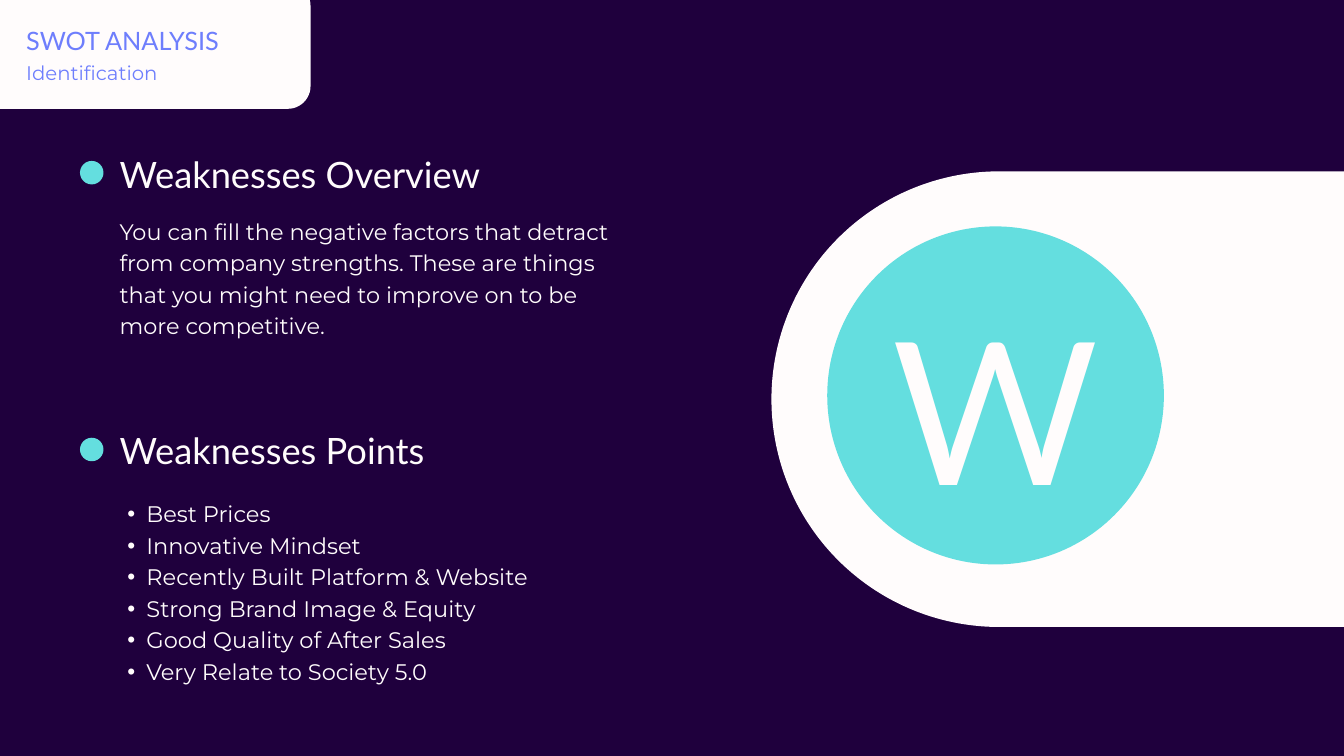
import pptx
import pptx.dml.color
import pptx.enum.shapes
import pptx.enum.text
import pptx.oxml.ns
import pptx.util
from lxml import etree

Pt = pptx.util.Pt
Shape = pptx.enum.shapes.MSO_SHAPE
Align = pptx.enum.text.PP_ALIGN


def color(hex_string):
    return pptx.dml.color.RGBColor.from_string(hex_string)


class SlideBuilder:
    NIGHT, WHITE, AQUA, VIOLET = "1F003D", "FFFCFC", "64DEDF", "6E7EFC"
    HEADING, BODY = "Lato", "Montserrat"
    LEADING = 1.4

    def __init__(self, page):
        self.page = page
        page.background.fill.solid()
        page.background.fill.fore_color.rgb = color(self.NIGHT)

    def shape(self, kind, left, top, width, height, fill):
        item = self.page.shapes.add_shape(
            kind, Pt(left), Pt(top), Pt(width), Pt(height))
        item.shadow.inherit = False
        item.fill.solid()
        item.fill.fore_color.rgb = color(fill)
        item.line.fill.background()
        return item

    def text(self, left, top, width, height, lines, size, font,
             fill=WHITE, align=Align.LEFT, bullets=False):
        box = self.page.shapes.add_textbox(0, 0, 0, 0)
        self.fill_box(box, left, top, width, height, lines, size, font, fill, align, bullets)

    def title(self, left, top, width, height, line, size):
        box = self.page.shapes.title
        box.element.getparent().append(box.element)  # bring to front
        self.fill_box(box, left, top, width, height, [line], size, self.HEADING, self.VIOLET)

    def fill_box(self, box, left, top, width, height, lines, size, font, fill,
                 align=Align.LEFT, bullets=False):
        """Place a box and fill it with one paragraph per line."""
        box.left, box.top, box.width, box.height = Pt(left), Pt(top), Pt(width), Pt(height)
        frame = box.text_frame
        frame.word_wrap = True
        frame.auto_size = pptx.enum.text.MSO_AUTO_SIZE.NONE
        frame.vertical_anchor = pptx.enum.text.MSO_ANCHOR.TOP
        frame.margin_left = frame.margin_right = frame.margin_top = frame.margin_bottom = 0
        for index, line in enumerate(lines):
            para = frame.add_paragraph() if index else frame.paragraphs[0]
            if bullets:
                self.bullet(para)
            para.alignment = align
            para.line_spacing = Pt(round(size * self.LEADING, 1))
            span = para.add_run()
            span.text = line
            span.font.size = Pt(size)
            span.font.name = font
            span.font.color.rgb = color(fill)

    def bullet(self, para):
        para.level = 1
        properties = para._p.get_or_add_pPr()
        properties.set("marL", str(Pt(41)))
        properties.set("indent", str(Pt(-20.5)))
        qn = pptx.oxml.ns.qn
        etree.SubElement(properties, qn("a:buFont")).set("typeface", "Arial")
        etree.SubElement(properties, qn("a:buChar")).set("char", "•")

    def section_heading(self, top, line):
        self.text(128.2, top, 500, 53.3, [line], 38.9, self.HEADING)
        self.shape(Shape.OVAL, 85.7, top + 17.6, 25.2, 25.2, self.AQUA)


def main():
    deck = pptx.Presentation()
    deck.slide_width, deck.slide_height = Pt(1440), Pt(810)
    slide = SlideBuilder(deck.slides.add_slide(deck.slide_layouts[5]))

    tab = slide.shape(Shape.ROUNDED_RECTANGLE, -40.3, -18, 373, 134.6, slide.WHITE)
    tab.adjustments[0] = 0.18
    slide.title(28, 21.6, 291, 36, "SWOT ANALYSIS", 27.1)
    slide.text(28, 61.2, 204, 28, ["Identification"], 21.1, slide.BODY, slide.VIOLET)

    panel = slide.shape(Shape.ROUND_2_SAME_RECTANGLE, 947.5, 62.6, 488.2, 730.1, slide.WHITE)
    panel.adjustments[0] = 0.5
    panel.rotation = 270
    slide.shape(Shape.OVAL, 886.3, 242.6, 360.7, 362.2, slide.AQUA)
    slide.text(942.5, 264.2, 248.4, 288, ["W"], 213.2, slide.HEADING, align=Align.CENTER)

    slide.section_heading(154.8, "Weaknesses Overview")
    slide.text(128.2, 229, 676, 131, [
        "You can fill the negative factors that detract",
        "from company strengths. These are things",
        "that you might need to improve on to be",
        "more competitive.",
    ], 24, slide.BODY)

    slide.section_heading(451.4, "Weaknesses Points")
    slide.text(115.9, 531.4, 620.6, 198, [
        "Best Prices",
        "Innovative Mindset",
        "Recently Built Platform & Website",
        "Strong Brand Image & Equity",
        "Good Quality of After Sales",
        "Very Relate to Society 5.0",
    ], 24.1, slide.BODY, bullets=True)

    deck.save("out.pptx")


if __name__ == "__main__":
    main()
